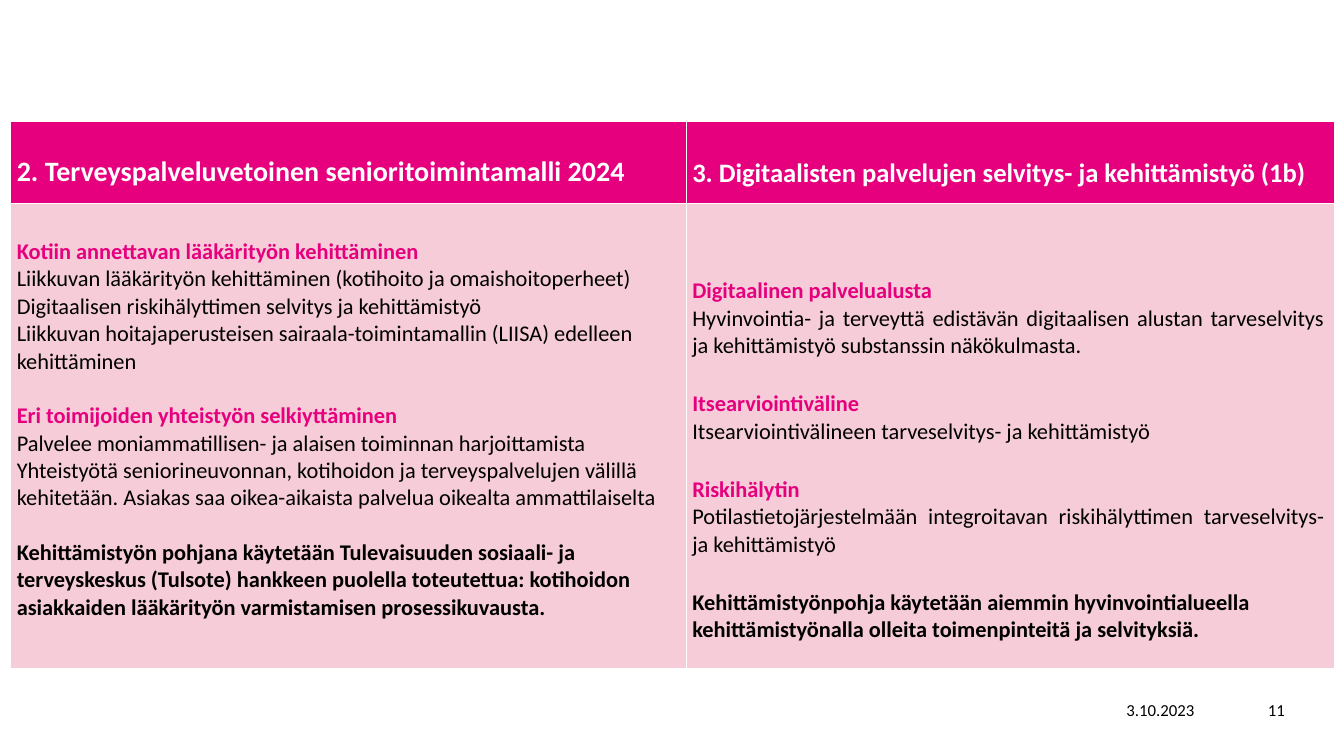
from lxml.etree import SubElement
from pptx import Presentation
from pptx.dml.color import RGBColor
from pptx.enum.text import MSO_ANCHOR as Anchor, PP_ALIGN as Align
from pptx.oxml.ns import qn
from pptx.util import Inches, Pt

FONT = "Calibri"
WHITE = RGBColor(0xFF, 0xFF, 0xFF)
BLACK = RGBColor(0x00, 0x00, 0x00)
MAGENTA = RGBColor(0xE6, 0x00, 0x7E)
PINK = RGBColor(0xF5, 0xCC, 0xD8)
SLIDE_WIDTH, SLIDE_HEIGHT = Inches(13.33), Inches(7.5)
COLUMN_SHARES = (50.26, 48.24)
ROW_SHARES = (10.8, 61.5)
BODY_SIZE = 16

HEADERS = (
    ("2. Terveyspalveluvetoinen senioritoimintamalli 2024", 20),
    ("3. Digitaalisten palvelujen selvitys- ja kehittämistyö (1b)", 19),
)
SENIOR_SECTIONS = (
    ("Kotiin annettavan lääkärityön kehittäminen", (
        "Liikkuvan lääkärityön kehittäminen (kotihoito ja omaishoitoperheet)",
        "Digitaalisen riskihälyttimen selvitys ja kehittämistyö",
        "Liikkuvan hoitajaperusteisen sairaala-toimintamallin (LIISA) edelleen kehittäminen",
    )),
    ("Eri toimijoiden yhteistyön selkiyttäminen", (
        "Palvelee moniammatillisen- ja alaisen toiminnan harjoittamista",
        "Yhteistyötä seniorineuvonnan, kotihoidon ja terveyspalvelujen välillä kehitetään. "
        "Asiakas saa oikea-aikaista palvelua oikealta ammattilaiselta",
    )),
)
SENIOR_BASIS = (
    "Kehittämistyön pohjana käytetään Tulevaisuuden sosiaali- ja terveyskeskus (Tulsote) "
    "hankkeen puolella toteutettua: kotihoidon asiakkaiden lääkärityön varmistamisen "
    "prosessikuvausta."
)
DIGITAL_SECTIONS = (
    ("Digitaalinen palvelualusta", (
        "Hyvinvointia- ja terveyttä edistävän digitaalisen alustan tarveselvitys "
        "ja kehittämistyö substanssin näkökulmasta.",
    )),
    ("Itsearviointiväline", ("Itsearviointivälineen tarveselvitys- ja kehittämistyö",)),
    ("Riskihälytin", (
        "Potilastietojärjestelmään integroitavan riskihälyttimen tarveselvitys- "
        "ja kehittämistyö",
    )),
)
DIGITAL_BASIS = (
    "Kehittämistyönpohja käytetään aiemmin hyvinvointialueella kehittämistyönalla "
    "olleita toimenpinteitä ja selvityksiä."
)


def across(percent):
    """Return a share of the slide's width."""
    return round(SLIDE_WIDTH * percent / 100)


def down(percent):
    """Return a share of the slide's height."""
    return round(SLIDE_HEIGHT * percent / 100)


def write(para, text, size, color, bold=False, align=Align.LEFT):
    """Add one styled run to an aligned paragraph."""
    para.alignment = align
    span = para.add_run()
    span.text = text
    span.font.name = FONT
    span.font.size = Pt(size)
    span.font.bold = bold
    span.font.color.rgb = color


def add_footer(page, text, left, width):
    """Place a small centred footer text."""
    box = page.shapes.add_textbox(across(left), down(91.2), across(width), down(5.33))
    frame = box.text_frame
    frame.word_wrap = True
    frame.vertical_anchor = Anchor.MIDDLE
    write(frame.paragraphs[0], text, 12, BLACK, align=Align.CENTER)


def style_cell(cell, fill, anchor):
    """Give a cell its white borders, fill, margins and anchor."""
    properties = cell._tc.get_or_add_tcPr()
    for side in ("lnL", "lnR", "lnT", "lnB"):
        line = SubElement(properties, qn(f"a:{side}"), w=str(Pt(1)))
        paint = SubElement(line, qn("a:solidFill"))
        SubElement(paint, qn("a:srgbClr"), val=str(WHITE))
    cell.fill.solid()
    cell.fill.fore_color.rgb = fill
    cell.vertical_anchor = anchor
    cell.margin_left, cell.margin_right = across(0.45), across(0.75)
    cell.margin_top, cell.margin_bottom = down(0.27), down(1.87)


def fill_body(cell, sections, basis, gap, align):
    """Write titled sections and a bold closing paragraph into a cell."""
    style_cell(cell, PINK, Anchor.MIDDLE)
    frame = cell.text_frame
    for index, (title, lines) in enumerate(sections):
        para = frame.add_paragraph() if index else frame.paragraphs[0]
        if index:
            para.space_before = Pt(gap)
        write(para, title, BODY_SIZE, MAGENTA, True, align)
        for line in lines:
            write(frame.add_paragraph(), line, BODY_SIZE, BLACK, align=align)
    para = frame.add_paragraph()
    para.space_before = Pt(gap)
    write(para, basis, BODY_SIZE, BLACK, True)


def add_plan_table(page):
    """Build the two-column table of development work."""
    frame = page.shapes.add_table(
        2, 2, across(0.8), down(16.1), across(sum(COLUMN_SHARES)), down(sum(ROW_SHARES)))
    table = frame.table
    table.horz_banding = False
    for column, share in zip(table.columns, COLUMN_SHARES):
        column.width = across(share)
    for row, share in zip(table.rows, ROW_SHARES):
        row.height = down(share)
    for index, (title, size) in enumerate(HEADERS):
        cell = table.cell(0, index)
        style_cell(cell, MAGENTA, Anchor.BOTTOM)
        write(cell.text_frame.paragraphs[0], title, size, WHITE, True)
    fill_body(table.cell(1, 0), SENIOR_SECTIONS, SENIOR_BASIS, 19.5, Align.LEFT)
    digital = table.cell(1, 1)
    fill_body(digital, DIGITAL_SECTIONS, DIGITAL_BASIS, 22, Align.JUSTIFY)
    digital.margin_top = down(8.4)


def main():
    """Build the slide and save it."""
    deck = Presentation()
    deck.slide_width, deck.slide_height = SLIDE_WIDTH, SLIDE_HEIGHT
    page = deck.slides.add_slide(deck.slide_layouts[6])
    add_footer(page, "3.10.2023", 81.92, 8.85)
    add_footer(page, "11", 92.5, 4.95)
    add_plan_table(page)
    deck.save("out.pptx")


if __name__ == "__main__":
    main()
